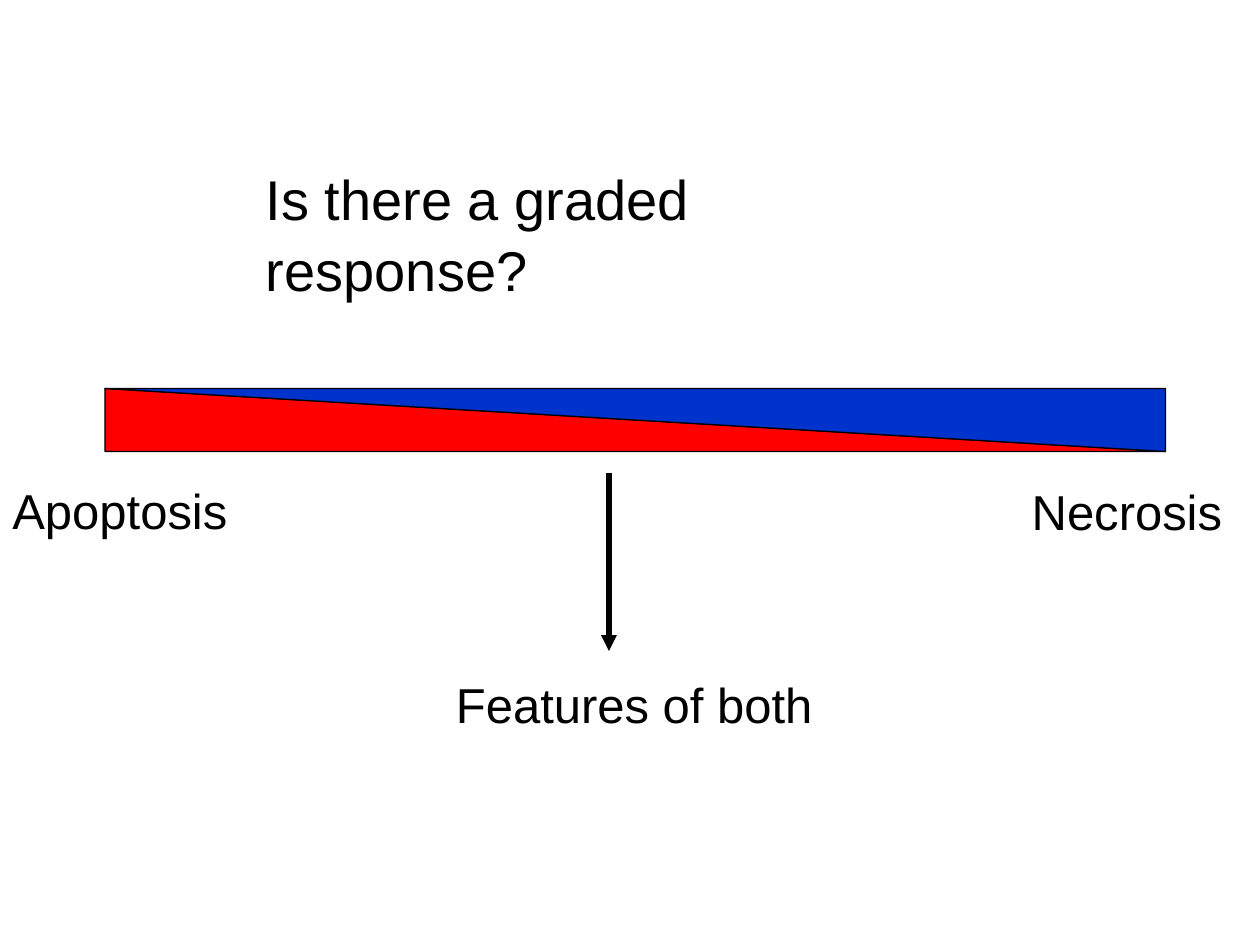
from dataclasses import dataclass

from lxml import etree
from pptx import Presentation
from pptx.dml.color import RGBColor
from pptx.enum.shapes import MSO_CONNECTOR, MSO_SHAPE
from pptx.enum.text import MSO_ANCHOR, MSO_AUTO_SIZE, PP_ALIGN
from pptx.oxml.ns import qn
from pptx.util import Pt

TRIANGLE = MSO_SHAPE.RIGHT_TRIANGLE
STRAIGHT = MSO_CONNECTOR.STRAIGHT
TOP = MSO_ANCHOR.TOP
LEFT = PP_ALIGN.LEFT
FIXED = MSO_AUTO_SIZE.NONE
TITLE_ONLY = 5


@dataclass(frozen=True)
class Theme:
    font: str = "Arial"
    ink: RGBColor = RGBColor(0x00, 0x00, 0x00)
    apoptosis: RGBColor = RGBColor(0xFF, 0x00, 0x00)
    necrosis: RGBColor = RGBColor(0x00, 0x33, 0xCC)
    title_size: float = 32
    label_size: float = 28
    outline: float = 0.75
    arrow: float = 3
    spacing: float = 1.05


def apply(target, values):
    for name, value in values.items():
        setattr(target, name, value)


class PageBuilder:
    """Draws elements on one page; all lengths are in points."""

    def __init__(self, page, theme):
        self.page = page
        self.theme = theme

    def fill_text(self, box, text, size, wrap, right_inset=7.2):
        frame = box.text_frame
        apply(frame, {
            "word_wrap": wrap, "auto_size": FIXED, "vertical_anchor": TOP,
            "margin_left": Pt(7.2), "margin_right": Pt(right_inset),
            "margin_top": Pt(3.6), "margin_bottom": Pt(3.6),
        })
        para = frame.paragraphs[0]
        apply(para, {"alignment": LEFT, "line_spacing": self.theme.spacing,
                     "space_before": Pt(0)})
        span = para.add_run()
        span.text = text
        apply(span.font, {"name": self.theme.font, "size": Pt(size)})
        span.font.color.rgb = self.theme.ink

    def title(self, text, left, top, width, height, right_inset):
        box = self.page.shapes.title
        apply(box, {"left": Pt(left), "top": Pt(top),
                    "width": Pt(width), "height": Pt(height)})
        self.fill_text(box, text, self.theme.title_size, True, right_inset)

    def label(self, text, left, top, width, height=41):
        box = self.page.shapes.add_textbox(
            Pt(left), Pt(top), Pt(width), Pt(height))
        self.fill_text(box, text, self.theme.label_size, False)

    def wedge_bar(self, left, top, width, height, wedges):
        group = self.page.shapes.add_group_shape()
        for color, rotation in wedges:
            wedge = group.shapes.add_shape(
                TRIANGLE, Pt(left), Pt(top), Pt(width), Pt(height))
            wedge.rotation = rotation
            wedge.shadow.inherit = False
            wedge.fill.solid()
            wedge.fill.fore_color.rgb = color
            wedge.line.color.rgb = self.theme.ink
            wedge.line.width = Pt(self.theme.outline)

    def down_arrow(self, x, top, bottom):
        arrow = self.page.shapes.add_connector(
            STRAIGHT, Pt(x), Pt(top), Pt(x), Pt(bottom))
        arrow.line.color.rgb = self.theme.ink
        arrow.line.width = Pt(self.theme.arrow)
        properties = arrow.element.spPr
        etree.SubElement(properties.find(qn("a:ln")), qn("a:tailEnd"),
                         type="triangle")
        etree.SubElement(properties, qn("a:effectLst"))


def main():
    deck = Presentation()
    deck.slide_width, deck.slide_height = Pt(720), Pt(540)
    theme = Theme()
    page = deck.slides.add_slide(deck.slide_layouts[TITLE_ONLY])
    builder = PageBuilder(page, theme)

    # Question, with a right inset that breaks it after "graded"
    builder.title("Is there a graded response?", 144.7, 88.6, 414, 45.4,
                  right_inset=60)

    # Scale from apoptosis to necrosis
    builder.wedge_bar(60, 222, 606, 36,
                      [(theme.apoptosis, 0), (theme.necrosis, 180)])
    builder.label("Apoptosis", 0, 269.5, 137.5)
    builder.label("Necrosis", 582.5, 270, 124)

    # Middle of the scale
    builder.down_arrow(348, 270, 372)
    builder.label("Features of both", 253.5, 380, 219)

    deck.save("out.pptx")


if __name__ == "__main__":
    main()
